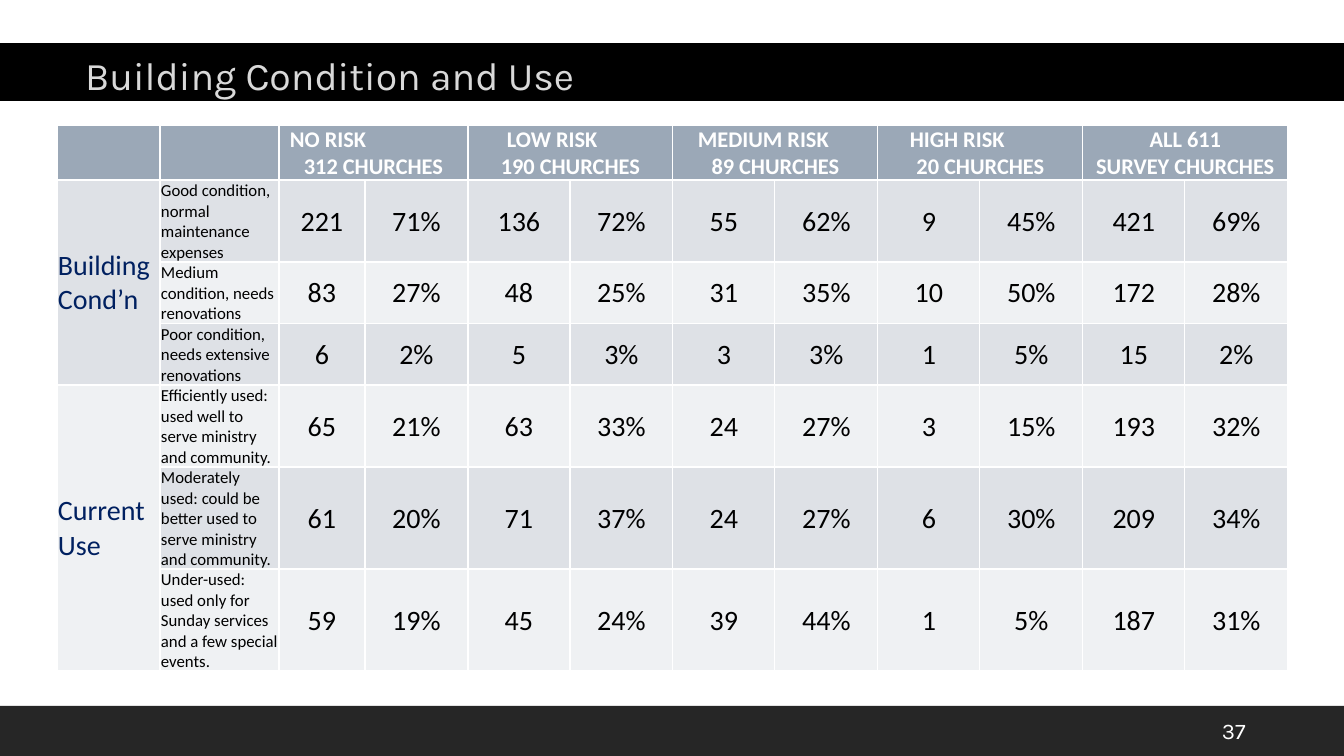
from pptx import Presentation
from pptx.dml.color import RGBColor
from pptx.enum.shapes import MSO_SHAPE
from pptx.enum.text import MSO_ANCHOR as Anchor, MSO_AUTO_SIZE as AutoSize, PP_ALIGN as Align
from pptx.util import Pt

PX = 914400 / 100.8
BLACK = RGBColor(0x00, 0x00, 0x00)
WHITE = RGBColor(0xFF, 0xFF, 0xFF)
CHARCOAL = RGBColor(0x26, 0x26, 0x26)
PALE_GREY = RGBColor(0xD9, 0xD9, 0xD9)
NAVY = RGBColor(0x00, 0x20, 0x60)
HEADER_FILL = RGBColor(0x9B, 0xA8, 0xB7)
BAND_FILLS = [RGBColor(0xDE, 0xE1, 0xE6), RGBColor(0xEF, 0xF1, 0xF3)]

TITLE_FONT = {"name": "Karla", "size": Pt(28), "color": PALE_GREY}
PAGE_FONT = {"name": "Karla", "size": Pt(16), "color": WHITE}
HEADER_FONT = {"name": "Calibri", "size": Pt(16), "bold": True, "color": WHITE}
GROUP_FONT = {"name": "Calibri", "size": Pt(20), "bold": False, "color": NAVY}
LABEL_FONT = {"name": "Calibri", "size": Pt(12), "bold": False, "color": BLACK}
VALUE_FONT = {"name": "Calibri", "size": Pt(20), "bold": False, "color": BLACK}

# Risk level, its indent in px (None centres it), number of churches
HEADERS = [
    ("NO RISK", 10, "312 CHURCHES"),
    ("LOW RISK", 38, "190 CHURCHES"),
    ("MEDIUM RISK", 24, "89 CHURCHES"),
    ("HIGH RISK", 31, "20 CHURCHES"),
    ("ALL 611", None, "SURVEY CHURCHES"),
]
GROUPS = ["Building Cond’n", "Current Use"]
GROUP_ROWS = 3
ROWS = [
    ("Good condition, normal maintenance expenses",
     "221 71% 136 72% 55 62% 9 45% 421 69%"),
    ("Medium condition, needs renovations",
     "83 27% 48 25% 31 35% 10 50% 172 28%"),
    ("Poor condition, needs extensive renovations",
     "6 2% 5 3% 3 3% 1 5% 15 2%"),
    ("Efficiently used: used well to serve ministry and community.",
     "65 21% 63 33% 24 27% 3 15% 193 32%"),
    ("Moderately used: could be better used to serve ministry and community.",
     "61 20% 71 37% 24 27% 6 30% 209 34%"),
    ("Under-used: used only for Sunday services and a few special events.",
     "59 19% 45 24% 39 44% 1 5% 187 31%"),
]
COLUMN_WIDTHS = [103, 119, 86, 103] + [102, 103] * 4
ROW_HEIGHTS = [55, 82, 61, 61, 82, 102, 102]


def px(length):
    return round(length * PX)


def apply(target, values):
    for name, value in values.items():
        setattr(target, name, value)


def place(shape, box):
    apply(shape, dict(zip(("left", "top", "width", "height"), map(px, box))))


def write(para, text, font, align=Align.LEFT):
    para.alignment = align
    span = para.add_run()
    span.text = text
    for name, value in font.items():
        if name == "color":
            span.font.color.rgb = value
        else:
            setattr(span.font, name, value)


def paint(item, color):
    item.fill.solid()
    item.fill.fore_color.rgb = color


def add_title(page, box):
    title = page.shapes.title
    place(title, box)
    paint(title, BLACK)
    frame = title.text_frame
    apply(frame, {"auto_size": AutoSize.NONE, "vertical_anchor": Anchor.MIDDLE,
                  "margin_left": px(85), "margin_top": px(5), "margin_bottom": 0})
    write(frame.paragraphs[0], "Building Condition and Use", TITLE_FONT)


def add_footer(page, box):
    left, top, width, height = box
    band = page.shapes.add_shape(MSO_SHAPE.RECTANGLE, *map(px, box))
    band.shadow.inherit = False
    paint(band, CHARCOAL)
    band.line.fill.background()
    number_box = (left + width - 132, top + 5, 86, 40)
    number = page.shapes.add_textbox(*map(px, number_box))
    apply(number.text_frame, {"word_wrap": True, "vertical_anchor": Anchor.MIDDLE})
    write(number.text_frame.paragraphs[0], "37", PAGE_FONT)


def write_cell(cell, text, font, align=Align.LEFT):
    write(cell.text_frame.paragraphs[0], text, font, align)


def fill_header(table):
    for index, (level, indent, churches) in enumerate(HEADERS):
        column = 2 + 2 * index
        cell = table.cell(0, column)
        cell.merge(table.cell(0, column + 1))
        first = cell.text_frame.paragraphs[0]
        write(first, level, HEADER_FONT, Align.CENTER if indent is None else Align.LEFT)
        if indent is not None:
            first._p.get_or_add_pPr().set("marL", str(px(indent)))
        write(cell.text_frame.add_paragraph(), churches, HEADER_FONT, Align.CENTER)


def add_survey_table(page, box):
    frame = page.shapes.add_table(len(ROW_HEIGHTS), len(COLUMN_WIDTHS), *map(px, box))
    table = frame.table
    for column, width in zip(table.columns, COLUMN_WIDTHS):
        column.width = px(width)
    for row, height in zip(table.rows, ROW_HEIGHTS):
        row.height = px(height)
    for index, row in enumerate(table.rows):
        for cell in row.cells:
            paint(cell, BAND_FILLS[(index - 1) % 2] if index else HEADER_FILL)
            apply(cell, {"margin_left": px(1), "margin_right": px(1), "margin_top": px(1),
                         "margin_bottom": 0, "vertical_anchor": Anchor.MIDDLE})
            for para in cell.text_frame.paragraphs:
                para.font.size = Pt(12)
    fill_header(table)
    for index, group in enumerate(GROUPS):
        first = 1 + index * GROUP_ROWS
        cell = table.cell(first, 0)
        cell.merge(table.cell(first + GROUP_ROWS - 1, 0))
        write_cell(cell, group, GROUP_FONT)
    for row, (label, values) in enumerate(ROWS, 1):
        write_cell(table.cell(row, 1), label, LABEL_FONT)
        for column, value in enumerate(values.split(), 2):
            write_cell(table.cell(row, column), value, VALUE_FONT, Align.CENTER)


def main():
    deck = Presentation()
    apply(deck, {"slide_width": px(1344), "slide_height": px(756)})
    page = deck.slides.add_slide(deck.slide_layouts[5])
    add_footer(page, (0, 706, 1344, 50))
    add_title(page, (0, 43, 1344, 58))
    add_survey_table(page, (57, 125, sum(COLUMN_WIDTHS), sum(ROW_HEIGHTS)))
    deck.save("out.pptx")


if __name__ == "__main__":
    main()
